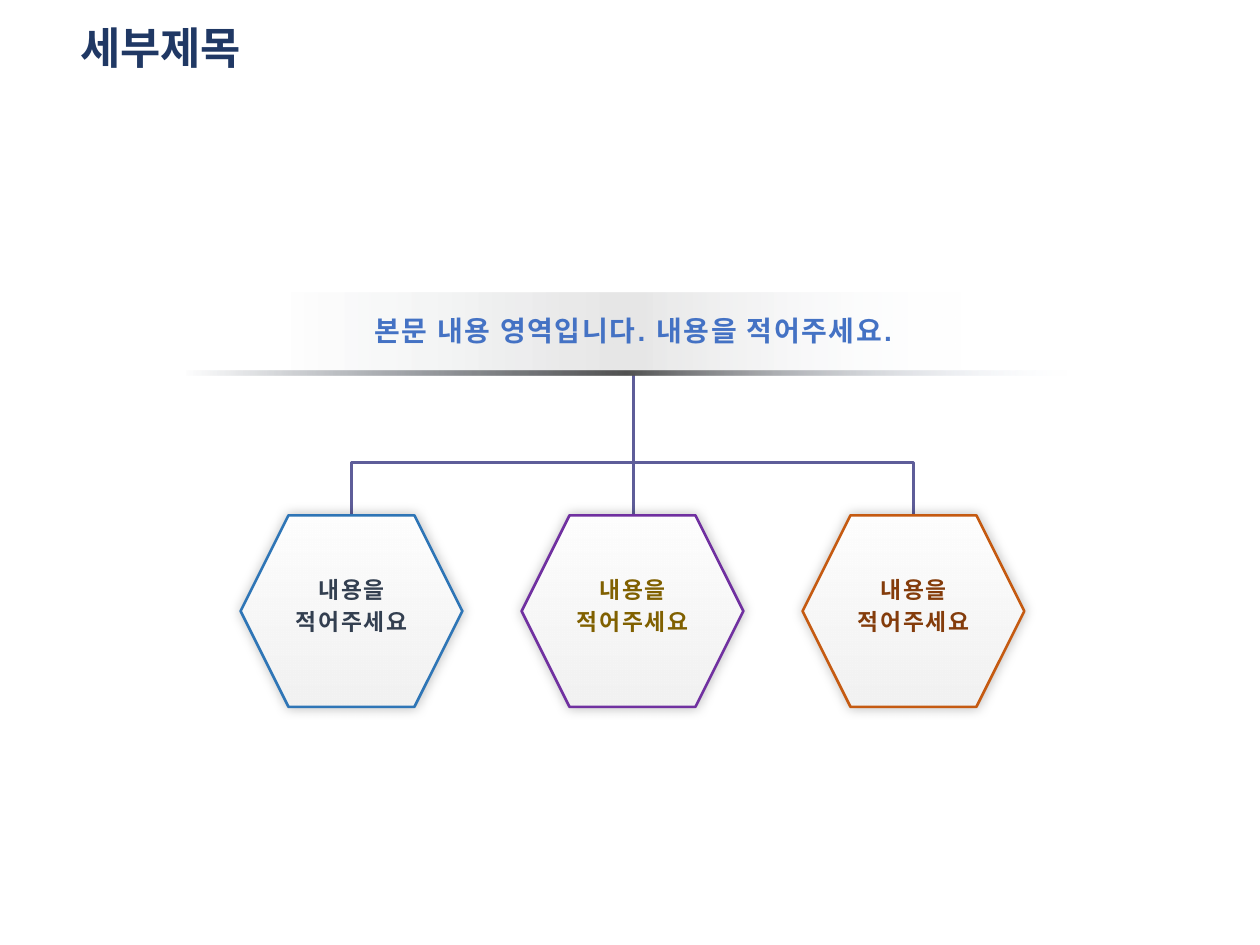
import dataclasses

import pptx
import pptx.dml.color
import pptx.enum.shapes
import pptx.enum.text
import pptx.oxml
import pptx.oxml.ns
import pptx.util

Inches = pptx.util.Inches
Pt = pptx.util.Pt
RGB = pptx.dml.color.RGBColor.from_string
SHAPES = pptx.enum.shapes.MSO_SHAPE
LINKS = pptx.enum.shapes.MSO_CONNECTOR
ALIGN = pptx.enum.text.PP_ALIGN


@dataclasses.dataclass(frozen=True)
class Theme:
    title_font: str = "Calibri"
    body_font: str = "Arial"
    title_size: float = 25
    banner_size: float = 16
    label_size: float = 13
    label_leading: float = 18
    tracking: float = 1
    stroke: float = 1.5
    title: str = "203864"
    banner: str = "4472C4"
    branch: str = "5E5D99"
    banner_fade: tuple = ((0, "333F50", 0), (50, "000000", 10), (100, "E1EBFB", 0))
    rule_fade: tuple = ((0, "333F50", 0), (50, "525252", 100), (100, "E1EBFB", 0))
    hexagon_fade: tuple = ((0, "FFFFFF", 100), (100, "F2F2F2", 100), (100, "E1EBFB", 0))
    outlines: tuple = ("2E75B6", "7030A0", "C55A11")
    labels: tuple = ("333F50", "806000", "843C0B")


THEME = Theme()
COLUMN_LEFT, COLUMN_STEP = 1.91, 2.23
HEXAGON_TOP, HEXAGON_WIDTH, HEXAGON_HEIGHT = 4.09, 1.76, 1.52
HUB_X, HUB_TOP, BRANCH_BOTTOM = 5.03, 2.97, 5.35


def drawing_xml(tag, attributes, children=""):
    return f'<a:{tag} {pptx.oxml.ns.nsdecls("a")} {attributes}>{children}</a:{tag}>'


def color_xml(color, opacity):
    return f'<a:srgbClr val="{color}"><a:alpha val="{opacity * 1000}"/></a:srgbClr>'


def fade(shape, stops, angle):
    shape.fill.solid()
    stop_list = "".join(
        f'<a:gs pos="{place * 1000}">{color_xml(color, opacity)}</a:gs>'
        for place, color, opacity in stops
    )
    direction = f'<a:lin ang="{angle * 60000}" scaled="0"/>'
    gradient = pptx.oxml.parse_xml(
        drawing_xml("gradFill", 'rotWithShape="1"', f"<a:gsLst>{stop_list}</a:gsLst>{direction}")
    )
    properties = shape._element.spPr
    properties.replace(properties.find(pptx.oxml.ns.qn("a:solidFill")), gradient)


def add_glow_shadow(shape):
    effects = shape._element.spPr.find(pptx.oxml.ns.qn("a:effectLst"))
    effects.append(pptx.oxml.parse_xml(drawing_xml(
        "outerShdw", f'blurRad="{Pt(7)}" dist="0" dir="0" algn="ctr" rotWithShape="0"',
        color_xml("000000", 25),
    )))


def add_faded_shape(slide, kind, box, stops, angle, outline=None):
    shape = slide.shapes.add_shape(kind, *map(Inches, box))
    fade(shape, stops, angle)
    if outline:
        shape.line.color.rgb = RGB(outline)
        shape.line.width = Pt(THEME.stroke)
    else:
        shape.line.fill.background()
    shape.shadow.inherit = False
    return shape


def add_text(slide, box, lines, font, size, color, align=ALIGN.CENTER,
             leading=None, tracking=None, grow=True):
    frame = slide.shapes.add_textbox(*map(Inches, box)).text_frame
    frame.word_wrap = True
    if grow:
        frame.auto_size = pptx.enum.text.MSO_AUTO_SIZE.SHAPE_TO_FIT_TEXT
    else:
        frame.vertical_anchor = pptx.enum.text.MSO_ANCHOR.MIDDLE
    for index, line in enumerate(lines):
        paragraph = frame.add_paragraph() if index else frame.paragraphs[0]
        paragraph.alignment = align
        paragraph.line_spacing = leading
        run = paragraph.add_run()
        run.text = line
        run.font.name = font
        run.font.size = Pt(size)
        run.font.bold = True
        run.font.color.rgb = RGB(color)
        if tracking:
            run.font._element.set("spc", str(int(tracking * 100)))


def add_link(slide, kind, start, end):
    link = slide.shapes.add_connector(kind, *map(Inches, start + end))
    link.line.color.rgb = RGB(THEME.branch)
    link.line.width = Pt(THEME.stroke)
    link._element.spPr.append(pptx.oxml.parse_xml(drawing_xml("effectLst", "")))
    return link


def add_branch(slide, foot_x):
    center_x = (foot_x + HUB_X) / 2
    center_y = (BRANCH_BOTTOM + HUB_TOP) / 2
    half_rise = (BRANCH_BOTTOM - HUB_TOP) / 2
    half_run = (foot_x - HUB_X) / 2
    branch = add_link(
        slide, LINKS.ELBOW,
        (center_x - half_rise, center_y + half_run),
        (center_x + half_rise, center_y - half_run),
    )
    properties = branch._element.spPr
    properties.find(pptx.oxml.ns.qn("a:xfrm")).set("rot", str(270 * 60000))
    bend = properties.find(pptx.oxml.ns.qn("a:prstGeom")).get_or_add_avLst()
    bend.append(pptx.oxml.parse_xml(drawing_xml("gd", 'name="adj1" fmla="val 70500"')))


def add_banner(slide):
    add_faded_shape(slide, SHAPES.RECTANGLE, (2.26, 2.32, 5.42, 0.61), THEME.banner_fade, 0)
    add_faded_shape(slide, SHAPES.RECTANGLE, (1.47, 2.94, 7, 0.04), THEME.rule_fade, 0)
    add_text(slide, (1.79, 2.44, 6.47, 0.37), ["본문 내용 영역입니다. 내용을 적어주세요."],
             THEME.body_font, THEME.banner_size, THEME.banner, tracking=THEME.tracking)


def add_topic(slide, column, outline, label_color):
    left = COLUMN_LEFT + column * COLUMN_STEP
    hexagon = add_faded_shape(
        slide, SHAPES.HEXAGON, (left, HEXAGON_TOP, HEXAGON_WIDTH, HEXAGON_HEIGHT),
        THEME.hexagon_fade, 90, outline,
    )
    add_glow_shadow(hexagon)
    add_text(slide, (left + 0.02, 4.49, 1.72, 0.61), ["내용을", "적어주세요"],
             THEME.body_font, THEME.label_size, label_color,
             leading=Pt(THEME.label_leading), tracking=THEME.tracking)


def main():
    deck = pptx.Presentation()
    deck.slide_width, deck.slide_height = Inches(10), Inches(7.5)
    slide = deck.slides.add_slide(deck.slide_layouts[6])
    add_text(slide, (0.54, 0.21, 8.62, 0.38), ["세부제목"], THEME.title_font,
             THEME.title_size, THEME.title, align=ALIGN.LEFT, leading=0.9, grow=False)
    for column in (2, 0):
        add_branch(slide, COLUMN_LEFT + column * COLUMN_STEP + HEXAGON_WIDTH / 2)
    add_link(slide, LINKS.STRAIGHT, (HUB_X, 3.18), (HUB_X, 4.56))
    add_banner(slide)
    for column, colors in enumerate(zip(THEME.outlines, THEME.labels)):
        add_topic(slide, column, *colors)
    deck.save("out.pptx")


if __name__ == "__main__":
    main()
